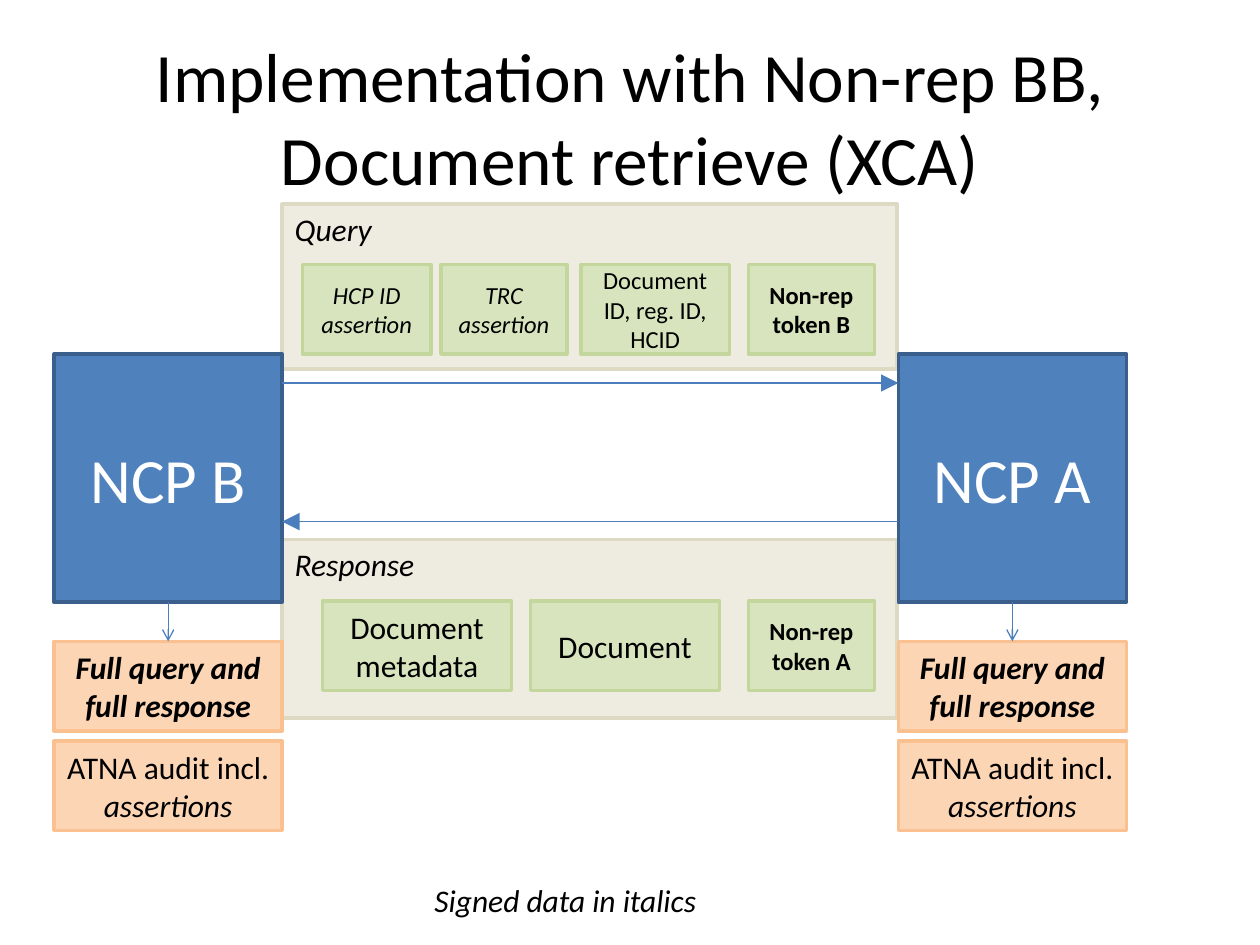
from lxml.etree import SubElement
from pptx import Presentation
from pptx.dml.color import RGBColor
from pptx.enum.shapes import MSO_CONNECTOR as Connector, MSO_SHAPE as Shape
from pptx.enum.text import MSO_ANCHOR as Anchor, MSO_AUTO_SIZE as AutoSize, PP_ALIGN as Align
from pptx.oxml.ns import qn
from pptx.util import Inches, Pt

COLORS = {
    "text": "000000", "white": "FFFFFF", "arrow": "4B7EBC",
    "node": "4F81BD", "node_line": "3A5F8C",
    "panel": "EEECE1", "panel_line": "DDD9C3",
    "item": "D7E4BD", "item_line": "C3D69B",
    "log": "FCD5B5", "log_line": "FAC090",
}


class SlideBuilder:
    """Holds the style and the current slide, and adds each kind of element."""

    font = "Calibri"

    def __init__(self, slide):
        self.slide = slide

    def color(self, name):
        return RGBColor.from_string(COLORS[name])

    def add_runs(self, frame, runs, size, color="text", align=Align.CENTER):
        paragraph = frame.paragraphs[0]
        paragraph.alignment = align
        for text, style in runs:
            run = paragraph.add_run()
            run.text = text
            run.font.name = self.font
            run.font.size = Pt(size)
            run.font.bold = "b" in style
            run.font.italic = "i" in style
            run.font.color.rgb = self.color(color)

    def title(self, text, left, top, width, height):
        shape = self.slide.shapes.title
        shape.left, shape.top = Inches(left), Inches(top)
        shape.width, shape.height = Inches(width), Inches(height)
        shape.text_frame.vertical_anchor = Anchor.MIDDLE
        self.add_runs(shape.text_frame, [(text, "")], 39.6)

    def box(self, kind, runs, left, top, width, height, size=18, color="text",
            align=Align.CENTER, anchor=Anchor.MIDDLE):
        shape = self.slide.shapes.add_shape(
            Shape.RECTANGLE, Inches(left), Inches(top), Inches(width), Inches(height))
        shape.shadow.inherit = False
        shape.fill.solid()
        shape.fill.fore_color.rgb = self.color(kind)
        shape.line.color.rgb = self.color(kind + "_line")
        shape.line.width = Pt(2)
        shape.text_frame.word_wrap = True
        shape.text_frame.vertical_anchor = anchor
        self.add_runs(shape.text_frame, runs, size, color, align)
        return shape

    def panel(self, text, top, height):
        self.box("panel", [(text, "i")], 2.24, top, 4.88, height,
                 align=Align.LEFT, anchor=Anchor.TOP)

    def arrow(self, start, end, head="triangle", scale="lg"):
        connector = self.slide.shapes.add_connector(
            Connector.STRAIGHT, *(Inches(value) for value in (*start, *end)))
        connector.line.color.rgb = self.color("arrow")
        connector.line.width = Pt(0.75)
        properties = connector._element.spPr
        SubElement(properties.find(qn("a:ln")), qn("a:tailEnd"),
                   type=head, w=scale, len=scale)
        SubElement(properties, qn("a:effectLst"))
        return connector

    def label(self, text, left, top, width, height):
        shape = self.slide.shapes.add_textbox(
            Inches(left), Inches(top), Inches(width), Inches(height))
        shape.text_frame.word_wrap = False
        shape.text_frame.auto_size = AutoSize.SHAPE_TO_FIT_TEXT
        self.add_runs(shape.text_frame, [(text, "i")], 18, align=Align.LEFT)

    def node(self, name, left):
        width, log_height = 1.81, 0.71
        node = self.box("node", [(name, "")], left, 2.81, width, 1.97, 36, "white")
        log = self.box("log", [("Full query and full response", "bi")],
                       left, 5.09, width, log_height)
        self.box("log", [("ATNA audit incl. ", ""), ("assertions", "i")],
                 left, 5.88, width, log_height)
        center = left + width / 2
        link = self.arrow((center, 4.78), (center, 5.09), "arrow", "med")
        link.begin_connect(node, 2)
        link.end_connect(log, 0)


def main():
    presentation = Presentation()
    presentation.slide_width, presentation.slide_height = Inches(10), Inches(7.5)
    builder = SlideBuilder(presentation.slides.add_slide(presentation.slide_layouts[5]))

    builder.title("Implementation with Non-rep BB, Document retrieve (XCA)", 0.5, 0.3, 9, 1.25)
    builder.panel("Response", 4.28, 1.42)
    builder.panel("Query", 1.62, 1.31)
    for name, left in (("NCP B", 0.43), ("NCP A", 7.13)):
        builder.node(name, left)
    builder.arrow((2.24, 3.04), (7.13, 3.04))
    builder.arrow((7.13, 4.14), (2.24, 4.14))

    query_top, response_top = 2.1, 4.77
    items = [
        ("HCP ID assertion", "i", 2.4, query_top, 1.02, 14),
        ("TRC assertion", "i", 3.5, query_top, 1, 14),
        ("Document ID, reg. ID, HCID", "", 4.61, query_top, 1.18, 14),
        ("Non-rep token B", "b", 5.94, query_top, 1, 14),
        ("Document metadata", "", 2.56, response_top, 1.5, 18),
        ("Document", "", 4.21, response_top, 1.5, 18),
        ("Non-rep token A", "b", 5.94, response_top, 1, 14),
    ]
    for text, style, left, top, width, size in items:
        builder.box("item", [(text, style)], left, top, width, 0.71, size)

    builder.label("Signed data in italics", 3.35, 6.94, 2.3, 0.4)
    presentation.save("out.pptx")


if __name__ == "__main__":
    main()
